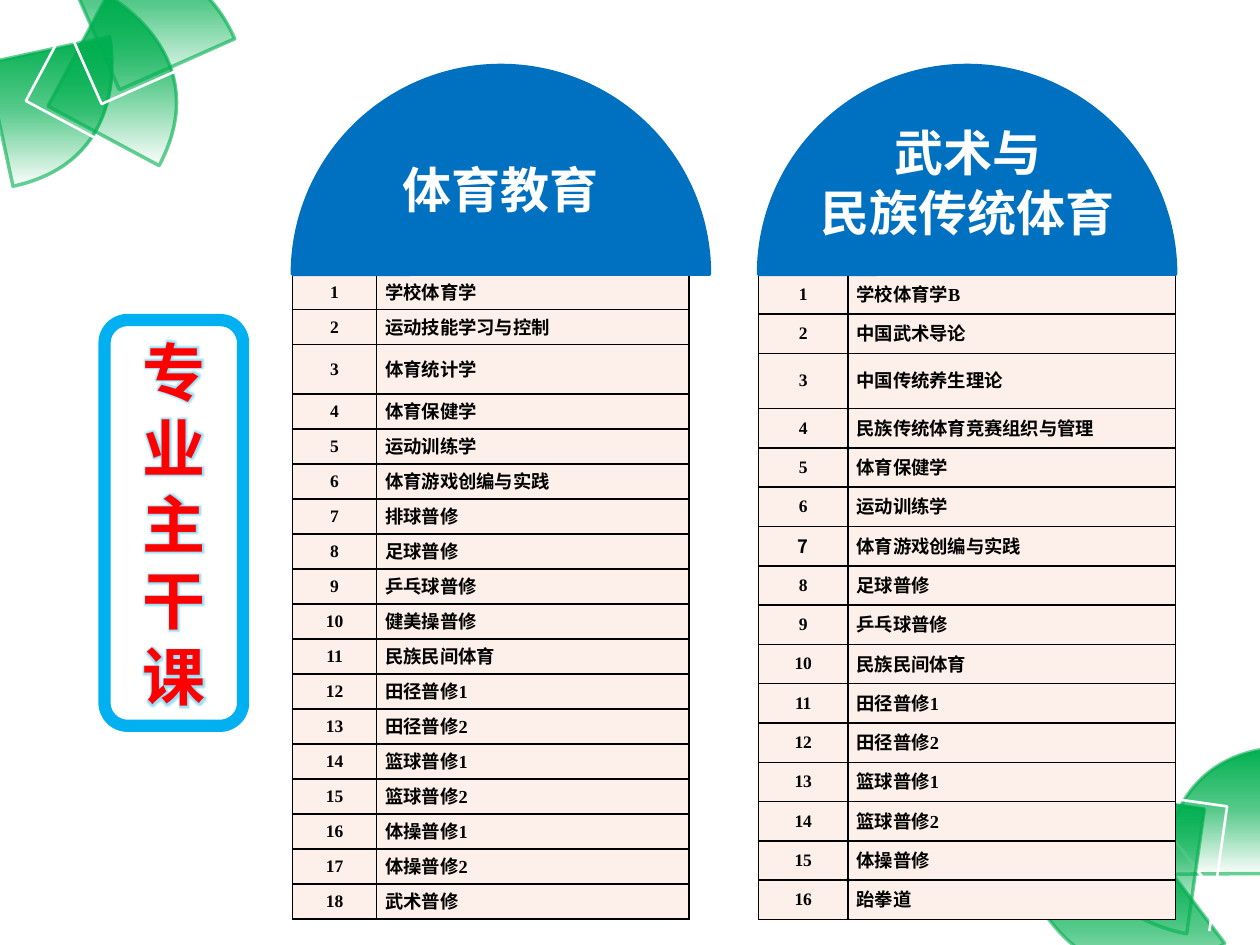
import math
from dataclasses import dataclass

import lxml.etree
import pptx
import pptx.dml.color
import pptx.enum.shapes
import pptx.enum.text
import pptx.oxml
import pptx.oxml.ns
import pptx.util

Inches = pptx.util.Inches
Pt = pptx.util.Pt
Alignment = pptx.enum.text.PP_ALIGN
ShapeType = pptx.enum.shapes.MSO_SHAPE
NAMESPACE = pptx.oxml.ns.nsdecls("a")


@dataclass(frozen=True)
class Theme:
    green: str = "00B050"
    cyan: str = "00B0F0"
    blue: str = "0070C0"
    red: str = "FF0000"
    white: str = "FFFFFF"
    black: str = "000000"
    cell: str = "FDEFE9"
    heading_font: str = "Noto Sans CJK SC"
    table_font: str = "Times New Roman"
    banner_size: float = 36
    title_size: float = 28
    course_size: float = 10.5
    number_size: float = 10


THEME = Theme()


@dataclass(frozen=True)
class Leaf:
    center_x: float
    center_y: float
    rotation: float


@dataclass(frozen=True)
class Programme:
    title: str
    left: float
    title_box: tuple[float, float, float, float]
    column_widths: tuple[float, float]
    tall_row: float
    courses: tuple[str, ...]
    heading_font_number: int = 0


LEAVES = [
    Leaf(0.48, 0.88, 167.8),
    Leaf(1.05, 0.64, 118.1),
    Leaf(1.2, 0.06, 66.1),
    Leaf(9.73, 6.44, 359.6),
    Leaf(9.02, 7.38, 233),
    Leaf(9.0, 6.84, 278.1),
]
LEAF_CENTER = (0.38, 0.7)
BLADE = [
    (0.19, 1.29), (0.15, 1.17), (0, 0.83), (0.05, 0.67), (0.11, 0.51), (0.44, 0.42),
    (0.53, 0.32), (0.62, 0.22), (0.57, -0.01), (0.6, 0.07), (0.64, 0.14), (0.75, 0.59),
    (0.73, 0.76), (0.71, 0.93), (0.55, 0.99), (0.47, 1.08), (0.39, 1.17), (0.31, 1.23),
    (0.28, 1.28), (0.24, 1.32), (0.28, 1.35), (0.27, 1.35), (0.25, 1.35), (0.22, 1.4),
    (0.19, 1.29),
]
VEIN = [
    (0.23, 1.3), (0.23, 1.16), (0.22, 1.03), (0.24, 0.94), (0.26, 0.85), (0.28, 0.84),
    (0.34, 0.78), (0.39, 0.71), (0.53, 0.61), (0.57, 0.56), (0.62, 0.5), (0.61, 0.44),
    (0.61, 0.44),
]
PROGRAMMES = [
    Programme(
        "体育教育", 2.32, (2.87, 1.21, 2.2, 0.57), (0.67, 2.48), 0.39,
        ("学校体育学", "运动技能学习与控制", "体育统计学", "体育保健学", "运动训练学",
         "体育游戏创编与实践", "排球普修", "足球普修", "乒乓球普修", "健美操普修",
         "民族民间体育", "田径普修1", "田径普修2", "篮球普修1", "篮球普修2",
         "体操普修1", "体操普修2", "武术普修"),
    ),
    Programme(
        "武术与\n民族传统体育", 6.02, (6.38, 0.92, 2.6, 1.04), (0.71, 2.6), 0.44,
        ("学校体育学B", "中国武术导论", "中国传统养生理论", "民族传统体育竞赛组织与管理",
         "体育保健学", "运动训练学", "体育游戏创编与实践", "足球普修", "乒乓球普修",
         "民族民间体育", "田径普修1", "田径普修2", "篮球普修1", "篮球普修2",
         "体操普修", "跆拳道"),
        heading_font_number=7,
    ),
]
TABLE_TOP, TABLE_HEIGHT, TALL_ROW_INDEX = 2.18, 5.12, 2
DOME_TOP, DOME_SIZE = 0.52, 3.31


def rgb(color: str) -> pptx.dml.color.RGBColor:
    return pptx.dml.color.RGBColor.from_string(color)


def format_text(text_frame, size: float, font: str, color: str, alignment, spacing: float | None) -> None:
    for paragraph in text_frame.paragraphs:
        paragraph.alignment = alignment
        if spacing:
            paragraph.line_spacing = Pt(spacing)
        for run in paragraph.runs:
            run.font.size, run.font.bold, run.font.name = Pt(size), True, font
            run.font.color.rgb = rgb(color)
            east_asian = lxml.etree.SubElement(run.font._element, pptx.oxml.ns.qn("a:ea"))
            east_asian.set("typeface", THEME.heading_font)


def set_line(shape, color: str, width: float) -> None:
    shape.line.color.rgb = rgb(color)
    shape.line.width = Pt(width)
    shape.shadow.inherit = False


def curve_segments(shape) -> None:
    segments = list(shape._element.iter(pptx.oxml.ns.qn("a:lnTo")))
    for start in range(0, len(segments), 3):
        curve = pptx.oxml.parse_xml(f"<a:cubicBezTo {NAMESPACE}/>")
        segments[start].addprevious(curve)
        for segment in segments[start:start + 3]:
            curve.append(segment[0])
            segment.getparent().remove(segment)


def add_leaf_part(slide, leaf: Leaf, points: list[tuple[float, float]], closed: bool):
    builder = slide.shapes.build_freeform(*points[0], scale=Inches(1))
    builder.add_line_segments(points[1:], close=closed)
    shape = builder.convert_to_shape()
    curve_segments(shape)
    offset_x, offset_y = (
        (min(values) + max(values)) / 2 - center for values, center in zip(zip(*points), LEAF_CENTER)
    )
    angle = math.radians(leaf.rotation)
    center_x = leaf.center_x + offset_x * math.cos(angle) - offset_y * math.sin(angle)
    center_y = leaf.center_y + offset_x * math.sin(angle) + offset_y * math.cos(angle)
    shape.left = Inches(center_x) - shape.width // 2
    shape.top = Inches(center_y) - shape.height // 2
    shape.rotation = leaf.rotation
    return shape


def add_leaf(slide, leaf: Leaf) -> None:
    blade = add_leaf_part(slide, leaf, BLADE, True)
    set_line(blade, THEME.green, 2)
    line_color = blade.line._ln.find(".//" + pptx.oxml.ns.qn("a:srgbClr"))
    lxml.etree.SubElement(line_color, pptx.oxml.ns.qn("a:alpha")).set("val", "60000")
    stops = "".join(
        f'<a:gs pos="{position}000"><a:srgbClr val="{THEME.green}"><a:alpha val="{opacity}000"/></a:srgbClr></a:gs>'
        for position, opacity in ((0, 100), (50, 65), (100, 0))
    )
    gradient = pptx.oxml.parse_xml(
        f'<a:gradFill {NAMESPACE} rotWithShape="0"><a:gsLst>{stops}</a:gsLst><a:lin ang="5400000" scaled="0"/></a:gradFill>'
    )
    blade.line._ln.addprevious(gradient)
    vein = add_leaf_part(slide, leaf, VEIN, False)
    vein.fill.background()
    set_line(vein, THEME.white, 1.5)


def add_banner(slide) -> None:
    shape = slide.shapes.add_shape(ShapeType.ROUNDED_RECTANGLE, Inches(0.83), Inches(2.54), Inches(1.1), Inches(3.22))
    shape.fill.background()
    set_line(shape, THEME.cyan, 7)
    shape.text_frame.word_wrap = True
    shape.text_frame.vertical_anchor = pptx.enum.text.MSO_ANCHOR.MIDDLE
    shape.text_frame.text = "专业主干课"
    format_text(shape.text_frame, THEME.banner_size, THEME.heading_font, THEME.red, Alignment.CENTER, 43.5)
    properties = shape.text_frame.paragraphs[0].runs[0].font._element
    properties.find(pptx.oxml.ns.qn("a:solidFill")).addnext(pptx.oxml.parse_xml(
        f'<a:effectLst {NAMESPACE}><a:glow rad="63500"><a:srgbClr val="{THEME.cyan}">'
        '<a:alpha val="40000"/></a:srgbClr></a:glow></a:effectLst>'
    ))


def fill_cell(cell, text: str, size: float, font: str, alignment, spacing: float | None) -> None:
    cell.text_frame.text = text
    format_text(cell.text_frame, size, font, THEME.black, alignment, spacing)
    cell.vertical_anchor = pptx.enum.text.MSO_ANCHOR.MIDDLE
    cell.margin_left = cell.margin_right = Inches(0.07)
    cell.margin_top = cell.margin_bottom = 0
    for side in "LRTB":
        cell._tc.get_or_add_tcPr().append(pptx.oxml.parse_xml(
            f'<a:ln{side} {NAMESPACE} w="12700"><a:solidFill><a:srgbClr val="{THEME.black}"/></a:solidFill></a:ln{side}>'
        ))
    cell.fill.solid()
    cell.fill.fore_color.rgb = rgb(THEME.cell)


def add_course_table(slide, programme: Programme) -> None:
    count = len(programme.courses)
    table = slide.shapes.add_table(
        count, 2, Inches(programme.left), Inches(TABLE_TOP),
        Inches(sum(programme.column_widths)), Inches(TABLE_HEIGHT),
    ).table
    table.first_row = table.horz_banding = False
    for column, width in zip(table.columns, programme.column_widths):
        column.width = Inches(width)
    row_height = (TABLE_HEIGHT - programme.tall_row) / (count - 1)
    for index, course in enumerate(programme.courses):
        table.rows[index].height = Inches(programme.tall_row if index == TALL_ROW_INDEX else row_height)
        number = index + 1
        number_style = (THEME.number_size, THEME.table_font, Alignment.CENTER, None)
        if number == programme.heading_font_number:
            number_style = (THEME.course_size, THEME.heading_font, Alignment.CENTER, 14)
        fill_cell(table.cell(index, 0), str(number), *number_style)
        fill_cell(table.cell(index, 1), course, THEME.course_size, THEME.table_font, Alignment.LEFT, 14)


def add_dome(slide, programme: Programme) -> None:
    dome = slide.shapes.add_shape(
        ShapeType.CHORD, Inches(programme.left), Inches(DOME_TOP), Inches(DOME_SIZE), Inches(DOME_SIZE)
    )
    dome.adjustments[0], dome.adjustments[1] = 53.95, 162
    dome.rotation = 90
    dome.fill.solid()
    dome.fill.fore_color.rgb = rgb(THEME.blue)
    set_line(dome, THEME.blue, 2)
    text_frame = slide.shapes.add_textbox(*map(Inches, programme.title_box)).text_frame
    text_frame.word_wrap = True
    text_frame.vertical_anchor = pptx.enum.text.MSO_ANCHOR.MIDDLE
    text_frame.text = programme.title
    format_text(text_frame, THEME.title_size, THEME.heading_font, THEME.white, Alignment.CENTER, 34)


def main() -> None:
    presentation = pptx.Presentation()
    presentation.slide_width, presentation.slide_height = Inches(10), Inches(7.5)
    slide = presentation.slides.add_slide(presentation.slide_layouts[6])
    for leaf in LEAVES:
        add_leaf(slide, leaf)
    add_banner(slide)
    for programme in PROGRAMMES:
        add_course_table(slide, programme)
    for programme in PROGRAMMES:
        add_dome(slide, programme)
    presentation.save("out.pptx")


if __name__ == "__main__":
    main()
